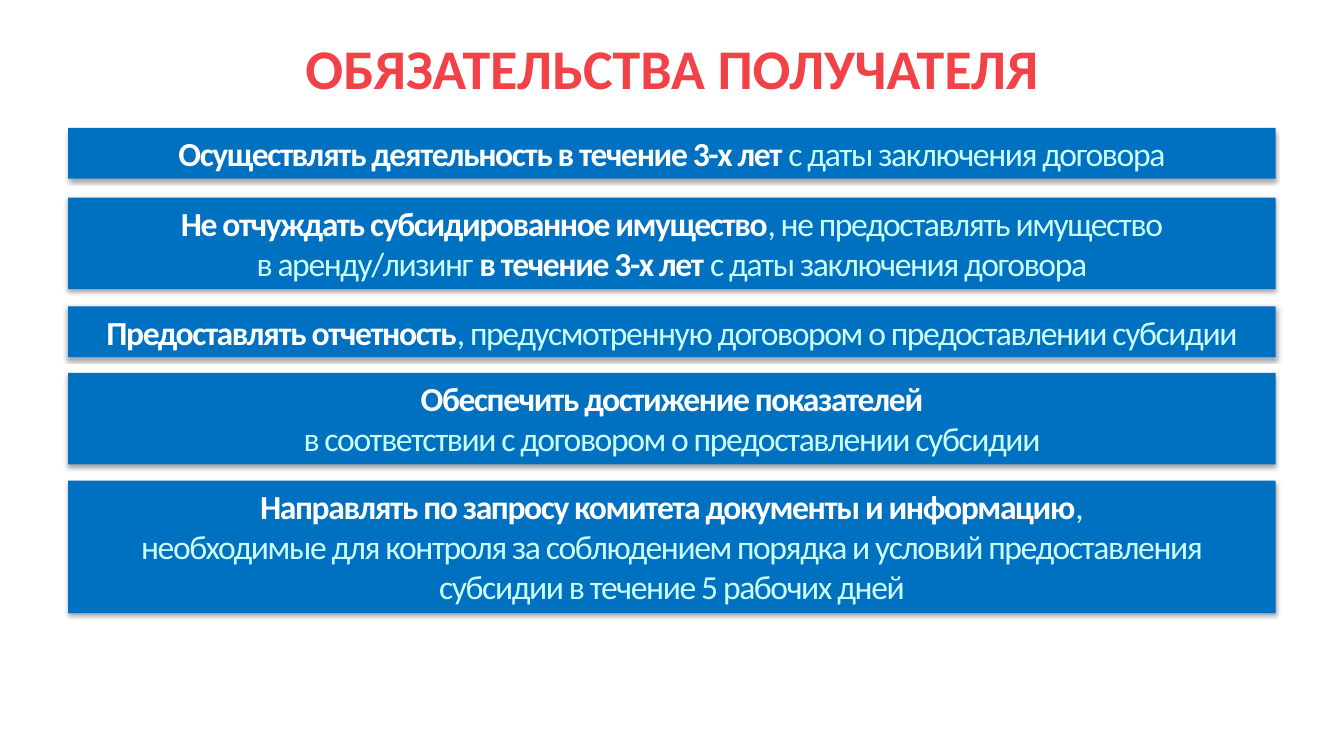
import pptx
import pptx.util
import pptx.dml.color
import pptx.enum.shapes
import pptx.enum.text
import pptx.oxml
import pptx.oxml.ns

Pt = pptx.util.Pt
FONT = "Calibri"
RED, BLUE, WHITE, PALE = "F04247", "0070C0", "FFFFFF", "CBFFFF"
SHADOW = (
    '<a:outerShdw %s blurRad="39370" dist="22860" dir="5400000" rotWithShape="0">'
    '<a:srgbClr val="000000"><a:alpha val="35000"/></a:srgbClr></a:outerShdw>'
) % pptx.oxml.ns.nsdecls("a")

DUTIES = [
    (91.4, [[("Осуществлять деятельность в течение 3-х лет", True),
             (" с даты заключения договора", False)]]),
    (141.1, [[("Не отчуждать субсидированное имущество", True),
              (", не предоставлять имущество", False)],
             [("в аренду/лизинг ", False),
              ("в течение 3-х лет ", True),
              ("с даты заключения договора", False)]]),
    (218.9, [[("Предоставлять отчетность", True),
              (", предусмотренную договором о предоставлении субсидии", False)]]),
    (266.4, [[("Обеспечить достижение показателей", True)],
             [("в соответствии с договором о предоставлении субсидии", False)]]),
    (343.4, [[("Направлять по запросу комитета документы и информацию", True),
              (",", False)],
             [("необходимые для контроля за соблюдением порядка и условий предоставления", False)],
             [("субсидии в течение 5 рабочих дней", False)]]),
]


def color(code):
    """Turn a hex string into a colour."""
    return pptx.dml.color.RGBColor.from_string(code)


def add_run(para, text, size, tint, bold):
    """Add one styled run to a paragraph."""
    run = para.add_run()
    run.text = text
    run.font.name = FONT
    run.font.size = Pt(size)
    run.font.bold = bold
    run.font.color.rgb = color(tint)
    return run


def add_title(slide, left, top, width, height):
    """Write the heading, centred in its box."""
    frame = slide.shapes.add_textbox(Pt(left), Pt(top), Pt(width), Pt(height)).text_frame
    frame.word_wrap = True
    frame.vertical_anchor = pptx.enum.text.MSO_ANCHOR.MIDDLE
    para = frame.paragraphs[0]
    para.alignment = pptx.enum.text.PP_ALIGN.CENTER
    para.line_spacing = 0.96
    add_run(para, "ОБЯЗАТЕЛЬСТВА ПОЛУЧАТЕЛЯ", 40, RED, True)


def add_bar(slide, left, top, width, lines):
    """Draw one duty bar, as tall as its lines need."""
    height = 7 + 29.2 * len(lines)
    bar = slide.shapes.add_shape(
        pptx.enum.shapes.MSO_SHAPE.RECTANGLE, Pt(left), Pt(top), Pt(width), Pt(height))
    bar.fill.solid()
    bar.fill.fore_color.rgb = color(BLUE)
    bar.line.fill.background()
    bar.shadow.inherit = False
    effects = bar._element.spPr.find(pptx.oxml.ns.qn("a:effectLst"))
    effects.append(pptx.oxml.parse_xml(SHADOW))
    frame = bar.text_frame
    frame.word_wrap = True
    frame.auto_size = pptx.enum.text.MSO_AUTO_SIZE.SHAPE_TO_FIT_TEXT
    frame.vertical_anchor = pptx.enum.text.MSO_ANCHOR.TOP
    for index, line in enumerate(lines):
        para = frame.add_paragraph() if index else frame.paragraphs[0]
        para.alignment = pptx.enum.text.PP_ALIGN.CENTER
        for text, bold in line:
            run = add_run(para, text, 24, WHITE if bold else PALE, bold)
            run.font._element.set("spc", "-100")


def main():
    """Build and save the slide."""
    deck = pptx.Presentation()
    deck.slide_width, deck.slide_height = Pt(960), Pt(540)
    slide = deck.slides.add_slide(deck.slide_layouts[6])
    add_title(slide, 0, 15, 960, 70)
    for top, lines in DUTIES:
        add_bar(slide, 48.6, top, 862.6, lines)
    deck.save("out.pptx")


if __name__ == "__main__":
    main()
